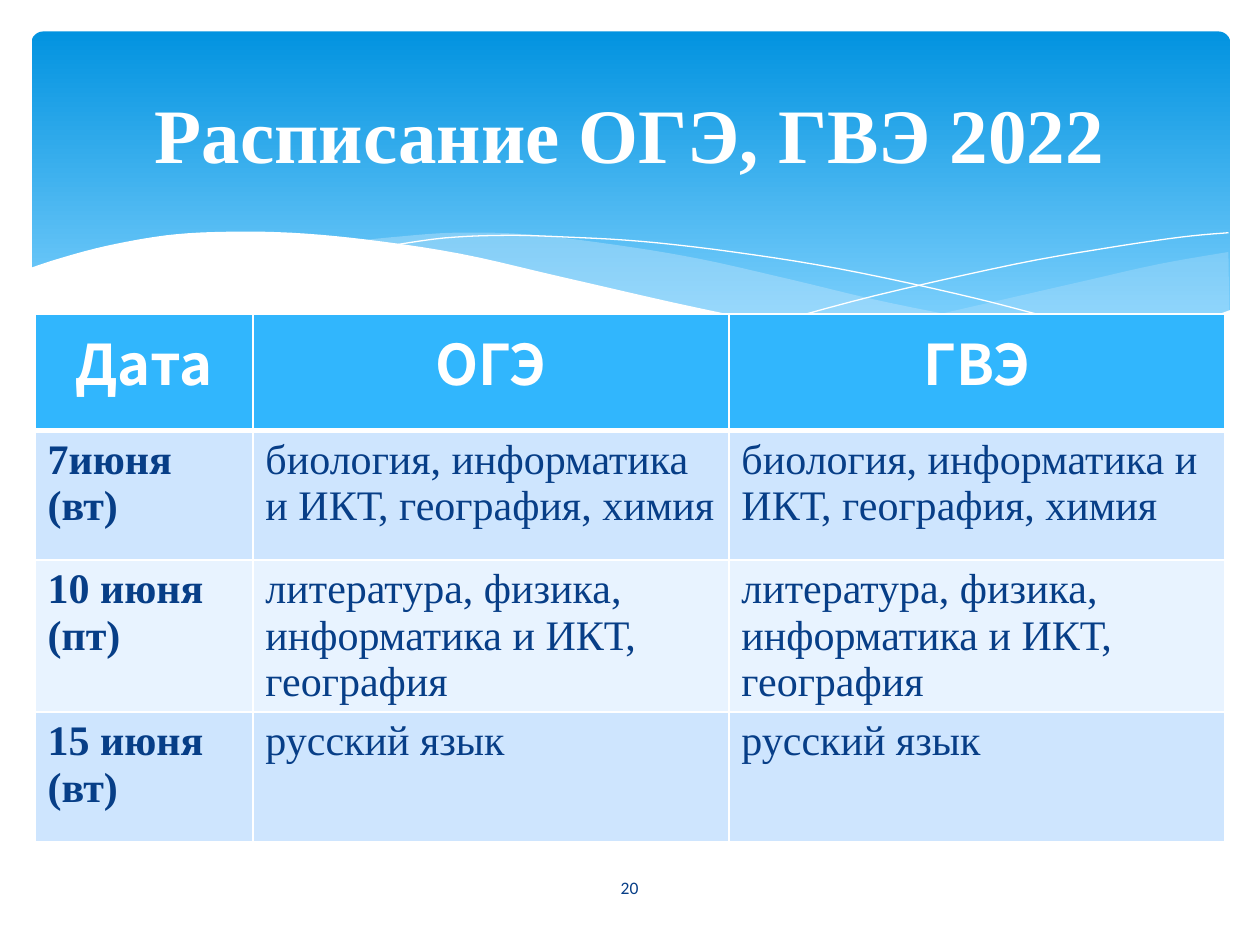
from dataclasses import dataclass
from typing import Optional

from lxml import etree
from pptx import Presentation
from pptx import util as u
from pptx.dml.color import RGBColor
from pptx.enum import shapes, text
from pptx.oxml.ns import qn

COLORS = {
    "white": "FFFFFF",
    "sky_top": "0293E0",
    "sky_bottom": "83D3FE",
    "wave": "C6E7FC",
    "header": "31B6FD",
    "band_dark": "CEE5FE",
    "band_light": "E8F3FF",
    "navy": "073E87",
}
SERIF = "Times New Roman"
Points = list[tuple[float, float]]


@dataclass
class Wave:
    curves: list[Points]  # each is smoothed; two points make a straight edge
    fill: Optional[str] = None
    alpha: Optional[int] = None  # percent


@dataclass
class TextStyle:
    name: str
    size: float
    color: str
    bold: bool = False
    centered: bool = False


TITLE = TextStyle(SERIF, 44, "white", bold=True, centered=True)
HEADER = TextStyle("Noto Sans CJK KR", 32, "white", bold=True, centered=True)
DATE = TextStyle(SERIF, 24, "navy", bold=True)
SUBJECTS = TextStyle(SERIF, 24, "navy")
NUMBER = TextStyle("Calibri", 10, "navy", centered=True)

WAVES = [
    # Right translucent wave
    Wave([[(702, 144), (662, 151), (620, 160.5), (561, 174), (525, 182), (476, 191)],
          [(476, 191), (527, 197), (578, 200), (635, 198), (673, 190), (702.5, 178)]],
         "wave", 29),
    # Middle translucent wave
    Wave([[(643, 196.5), (581, 187), (508, 173), (453, 160), (400, 148), (352, 140),
           (302, 134), (260, 133), (225, 135.5), (206, 137.5)],
          [(206, 137.5), (246, 143), (291, 152), (354, 167), (433, 184), (490, 193.5),
           (548, 199.5), (596, 200), (643, 196.5)]],
         "wave", 40),
    # Two hairlines
    Wave([[(222.5, 140.5), (254, 136), (289, 134.5), (324, 135.5), (367, 138),
           (419, 144), (479, 153.5), (547, 168), (598, 181), (653, 196)]]),
    Wave([[(441, 185), (500, 169), (580, 151), (634, 141.5), (675, 135.5), (702, 133)]]),
    # White foreground wave
    Wave([[(703.5, 177), (662, 191), (612, 198), (571, 199), (523, 196), (466, 189),
           (399, 176), (322, 158.5), (263, 145), (210, 137), (166, 133), (127, 132.5),
           (95, 134.5), (61, 140.5), (33, 148), (16.5, 153.5)],
          [(16.5, 237), (703.5, 237)]],
         "white"),
]

SCIENCE = "биология, информатика и ИКТ, география, химия"
LITERATURE = "литература, физика, информатика и ИКТ, география"
RUSSIAN = "русский язык"
SCHEDULE = [
    ("Дата", "ОГЭ", "ГВЭ"),
    ("7июня\n(вт)", SCIENCE, SCIENCE),
    ("10 июня (пт)", LITERATURE, LITERATURE),
    ("15 июня\n(вт)", RUSSIAN, RUSSIAN),
]
COLUMN_WIDTHS = (124.5, 272, 283.5)
ROW_HEIGHTS = (66.5, 74, 87, 74)


def rgb(name: str) -> RGBColor:
    return RGBColor.from_string(COLORS[name])


def write(frame, content: str, style: TextStyle) -> None:
    frame.word_wrap = True
    frame.text = content
    for paragraph in frame.paragraphs:
        paragraph.alignment = text.PP_ALIGN.CENTER if style.centered else text.PP_ALIGN.LEFT
        font_format = {"name": style.name, "size": u.Pt(style.size), "bold": style.bold}
        for run in paragraph.runs:
            for attribute, value in font_format.items():
                setattr(run.font, attribute, value)
            run.font.color.rgb = rgb(style.color)


def smooth(points: Points, steps: int = 5) -> Points:
    """Catmull-Rom curve through the points."""
    padded = [points[0], *points, points[-1]]
    result = [points[0]]
    for a, b, c, d in zip(padded, padded[1:], padded[2:], padded[3:]):
        for step in range(1, steps + 1):
            t = step / steps
            result.append(tuple(
                0.5 * (2 * q + (r - p) * t + (2 * p - 5 * q + 4 * r - s) * t ** 2
                       + (3 * q - p - 3 * r + s) * t ** 3)
                for p, q, r, s in zip(a, b, c, d)))
    return result


def draw_wave(slide, wave: Wave) -> None:
    outline = [(u.Pt(x), u.Pt(y)) for curve in wave.curves
               for x, y in (smooth(curve) if len(curve) > 2 else curve)]
    builder = slide.shapes.build_freeform(*outline[0])
    builder.add_line_segments(outline[1:], close=wave.fill is not None)
    shape = builder.convert_to_shape()
    shape.shadow.inherit = False
    if wave.fill is None:
        shape.fill.background()
        shape.line.color.rgb = rgb("white")
        shape.line.width = u.Pt(0)
        return
    shape.fill.solid()
    shape.fill.fore_color.rgb = rgb(wave.fill)
    shape.line.fill.background()
    if wave.alpha is not None:
        color = shape.fill._xPr.find(qn("a:solidFill"))[0]
        etree.SubElement(color, qn("a:alpha"), val=str(wave.alpha * 1000))


def draw_sky(slide) -> None:
    sky = slide.shapes.add_shape(shapes.MSO_SHAPE.ROUNDED_RECTANGLE,
                                 u.Pt(18), u.Pt(18), u.Pt(685), u.Pt(194.5))
    sky.adjustments[0] = 0.034
    sky.shadow.inherit = False
    sky.line.fill.background()
    sky.fill.gradient()
    sky.fill.gradient_angle = 270
    for stop, color, position in zip(sky.fill.gradient_stops, ("sky_top", "sky_bottom"), (0, 0.9)):
        stop.color.rgb = rgb(color)
        stop.position = position


def set_borders(cell, bottom: float) -> None:
    properties = cell._tc.get_or_add_tcPr()
    for side, width in {"lnL": 1, "lnR": 1, "lnT": 1, "lnB": bottom}.items():
        line = etree.SubElement(properties, qn(f"a:{side}"), w=str(u.Pt(width)))
        fill = etree.SubElement(line, qn("a:solidFill"))
        etree.SubElement(fill, qn("a:srgbClr"), val=COLORS["white"])


def draw_schedule(slide) -> None:
    frame = slide.shapes.add_table(len(ROW_HEIGHTS), len(COLUMN_WIDTHS), u.Pt(20), u.Pt(179.5),
                                   u.Pt(sum(COLUMN_WIDTHS)), u.Pt(sum(ROW_HEIGHTS)))
    table = frame.table
    for column, width in zip(table.columns, COLUMN_WIDTHS):
        column.width = u.Pt(width)
    for index, (row, height, contents) in enumerate(zip(table.rows, ROW_HEIGHTS, SCHEDULE)):
        row.height = u.Pt(height)
        band = "header" if index == 0 else ("band_light", "band_dark")[index % 2]
        for position, (cell, content) in enumerate(zip(row.cells, contents)):
            style = HEADER if index == 0 else DATE if position == 0 else SUBJECTS
            set_borders(cell, bottom=3 if index == 0 else 1)
            cell.fill.solid()
            cell.fill.fore_color.rgb = rgb(band)
            write(cell.text_frame, content, style)


def place(shape, left: float, top: float, width: float, height: float) -> None:
    box = {"left": left, "top": top, "width": width, "height": height}
    for attribute, value in box.items():
        setattr(shape, attribute, u.Pt(value))
    shape.text_frame.vertical_anchor = text.MSO_ANCHOR.MIDDLE


def main() -> None:
    presentation = Presentation()
    presentation.slide_width, presentation.slide_height = u.Pt(720), u.Pt(540)
    slide = presentation.slides.add_slide(presentation.slide_layouts[5])

    # Backdrop
    draw_sky(slide)
    for wave in WAVES:
        draw_wave(slide, wave)

    # Exam schedule
    draw_schedule(slide)

    # Slide number
    number = slide.shapes.add_textbox(0, 0, 0, 0)
    place(number, 314, 492.5, 91.5, 29)
    write(number.text_frame, "20", NUMBER)

    # Title, brought in front of the backdrop
    title = slide.shapes.title
    place(title, 36, 26.5, 648, 98.5)
    write(title.text_frame, "Расписание ОГЭ, ГВЭ 2022", TITLE)
    slide.shapes._spTree.append(title._element)

    presentation.save("out.pptx")


if __name__ == "__main__":
    main()
